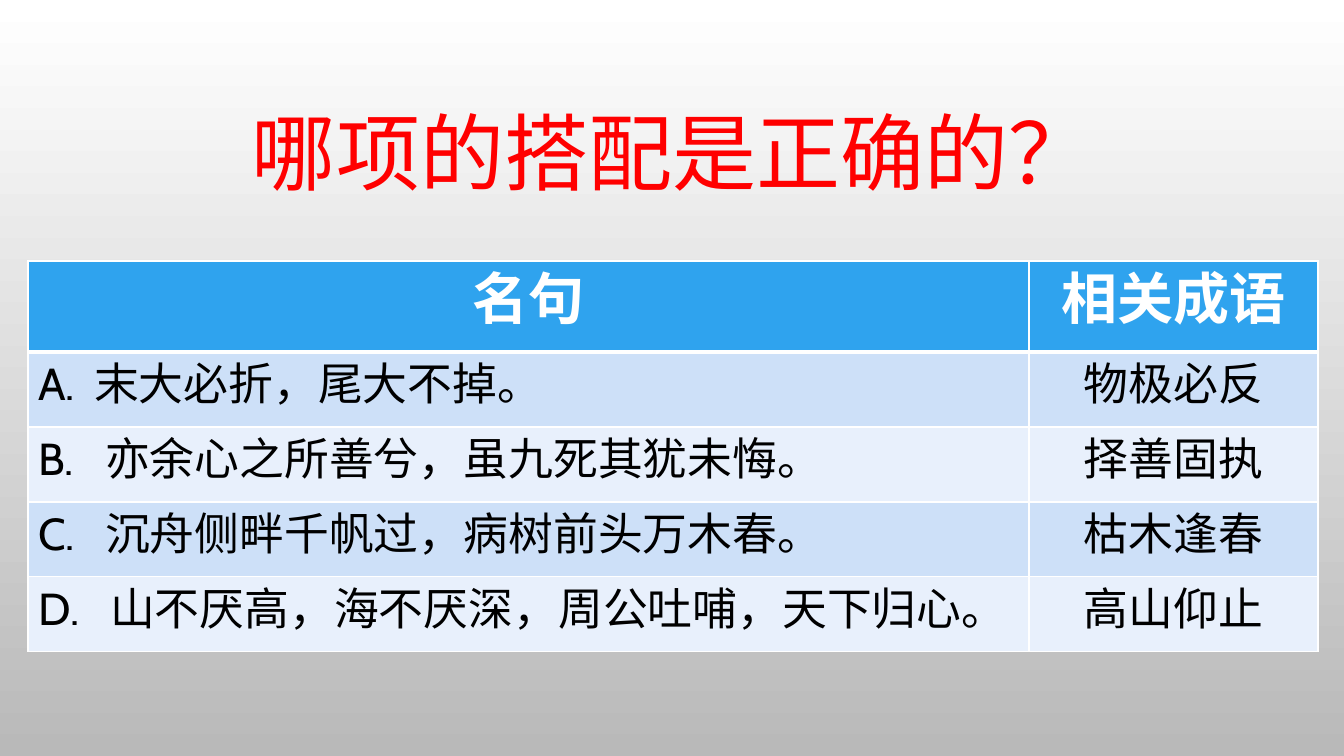
from pptx import Presentation
from pptx.dml.color import RGBColor
from pptx.enum.lang import MSO_LANGUAGE_ID
from pptx.enum.text import MSO_ANCHOR, PP_ALIGN
from pptx.oxml.ns import qn
from pptx.util import Pt
from lxml import etree

CENTER, LEFT = PP_ALIGN.CENTER, PP_ALIGN.LEFT
MIDDLE = MSO_ANCHOR.MIDDLE
CHINESE = MSO_LANGUAGE_ID.SIMPLIFIED_CHINESE
FACE = "Cabin"


def px(n):
    return round(n * 914400 / 100.8)


def tint(code):
    return RGBColor.from_string(code)


prs = Presentation()
prs.slide_width, prs.slide_height = px(1344), px(756)
slide = prs.slides.add_slide(prs.slide_layouts[6])

back = slide.background.fill
back.gradient()
back.gradient_angle = 270
for stop, (spot, code) in zip(back.gradient_stops, [(0, "FFFFFF"), (1, "B9B9B9")]):
    stop.position = spot
    stop.color.rgb = tint(code)

title = slide.shapes.add_textbox(px(101), px(69), px(1142), px(176)).text_frame
title.word_wrap = True
title.vertical_anchor = MIDDLE
title.text = "哪项的搭配是正确的？"
title.paragraphs[0].line_spacing = 0.9

rows = [
    ("名句", "相关成语"),
    ("A.\t末大必折，尾大不掉。", "物极必反"),
    ("B.\t亦余心之所善兮，虽九死其犹未悔。", "择善固执"),
    ("C.\t沉舟侧畔千帆过，病树前头万木春。", "枯木逢春"),
    ("D.\t山不厌高，海不厌深，周公吐哺，天下归心。", "高山仰止"),
]
tabs = [0, 56, 67, 67, 72]
fills = ["2FA3EE", "CDE0F8", "E8F0FC", "CDE0F8", "E8F0FC"]
head = {"size": Pt(40), "bold": True}
body = {"size": Pt(32), "bold": False}

table = slide.shapes.add_table(5, 2, px(28), px(261), px(1290), px(391)).table
for col, wide in zip(table.columns, [1001, 289]):
    col.width = px(wide)

lines = [(title.paragraphs[0], CENTER, "FF0000", {"size": Pt(60), "bold": False})]
for r, words in enumerate(rows):
    table.rows[r].height = px(75 if r else 91)
    for c, word in enumerate(words):
        cell = table.cell(r, c)
        cell.text = word
        line = cell.text_frame.paragraphs[0]
        if r and c == 0:
            stops = etree.SubElement(line._p.get_or_add_pPr(), qn("a:tabLst"))
            etree.SubElement(stops, qn("a:tab"), pos=str(px(tabs[r])), algn="l")
        props = cell._tc.get_or_add_tcPr()
        for side in "LRTB":
            thick = (side, r) in [("B", 0), ("T", 1)]
            edge = etree.SubElement(props, qn("a:ln" + side), w=str(Pt(3 if thick else 1)))
            solid = etree.SubElement(edge, qn("a:solidFill"))
            etree.SubElement(solid, qn("a:srgbClr"), val="FFFFFF")
        cell.fill.solid()
        cell.fill.fore_color.rgb = tint(fills[r])
        lines.append((
            line,
            LEFT if r and c == 0 else CENTER,
            "000000" if r else "FFFFFF",
            body if r else head,
        ))

for line, align, code, style in lines:
    line.alignment = align
    for run in line.runs:
        for key, value in {**style, "name": FACE, "language_id": CHINESE}.items():
            setattr(run.font, key, value)
        run.font.color.rgb = tint(code)
        etree.SubElement(run._r.get_or_add_rPr(), qn("a:ea"), typeface=FACE)

prs.save("out.pptx")
